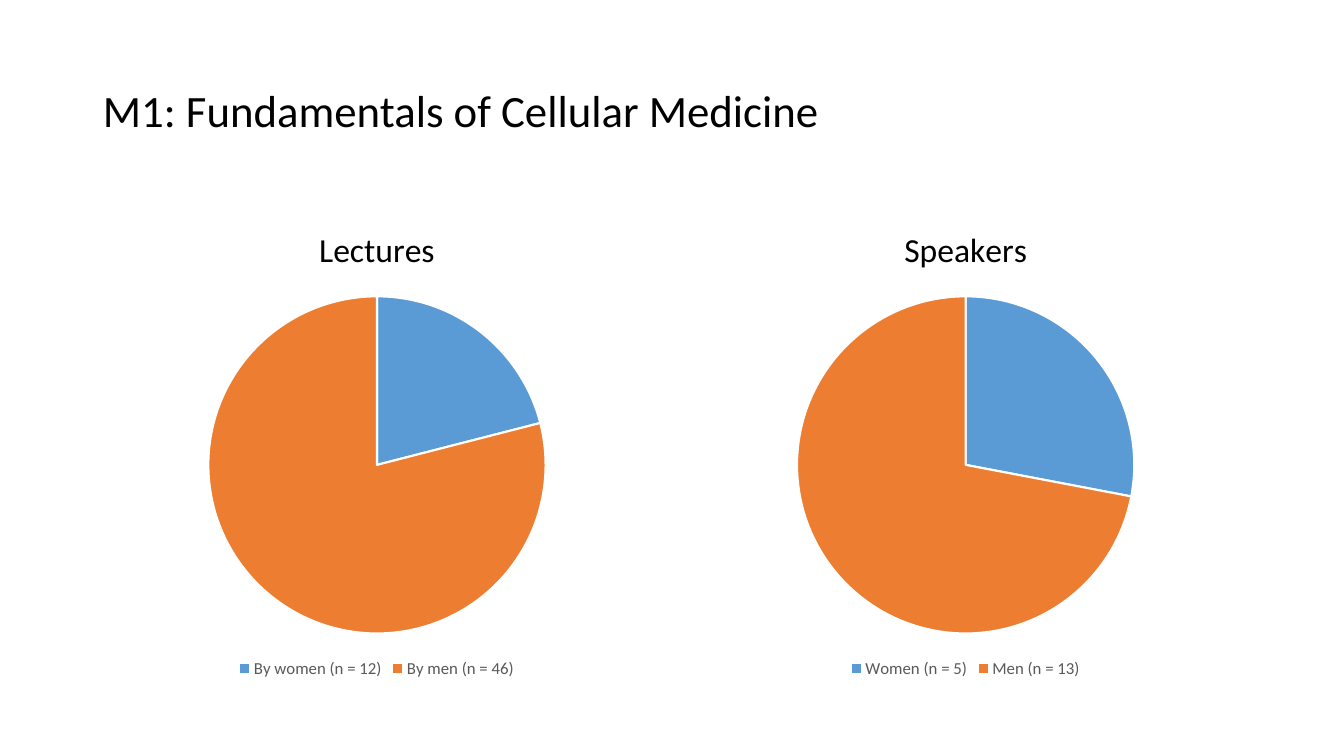
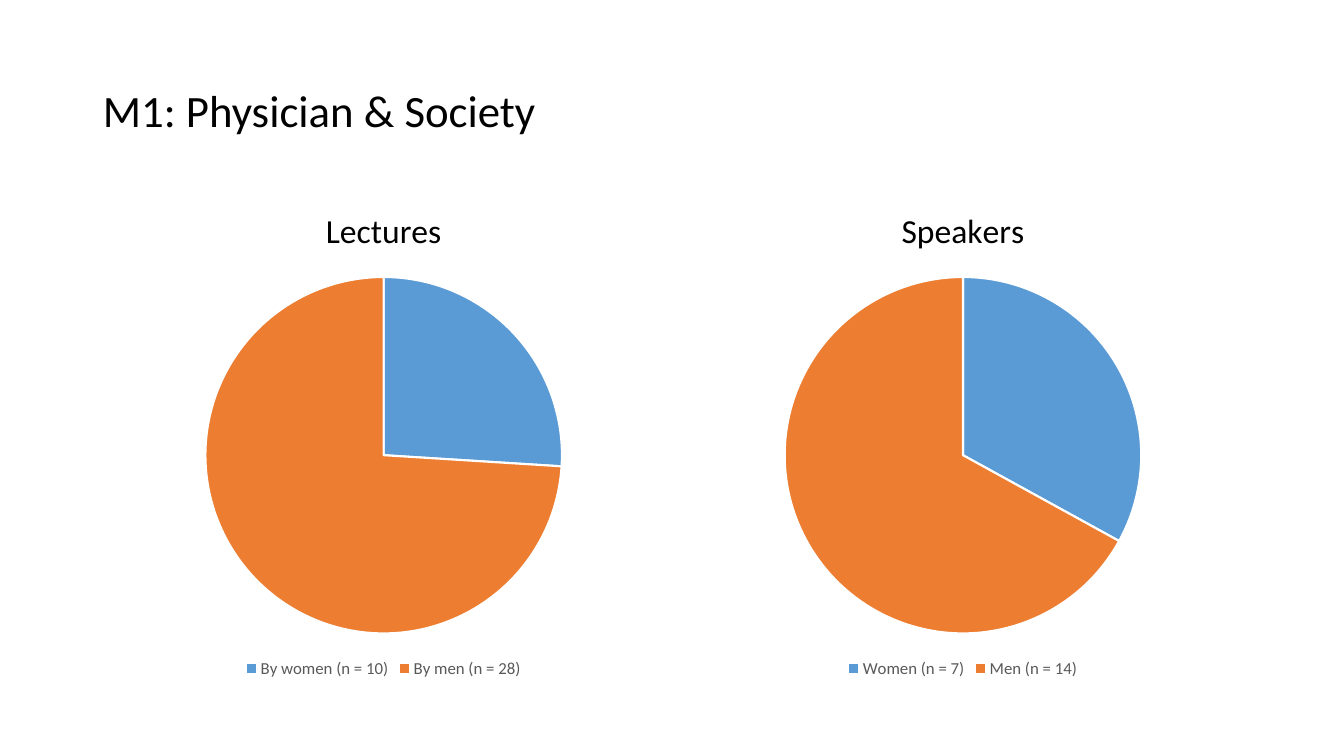
import pptx
import pptx.chart.data
import pptx.dml.color
import pptx.enum.chart
import pptx.enum.text
import pptx.util

BLACK = pptx.dml.color.RGBColor(0x00, 0x00, 0x00)
WHITE = pptx.dml.color.RGBColor(0xFF, 0xFF, 0xFF)
GREY = pptx.dml.color.RGBColor(0x59, 0x59, 0x59)
BLUE = pptx.dml.color.RGBColor(0x5B, 0x9B, 0xD5)
ORANGE = pptx.dml.color.RGBColor(0xED, 0x7D, 0x31)

# Positions are percentages of the slide's width and height.
LEFT_MARGIN, RIGHT_MARGIN = 6.9, 93.1
TITLE_TOP, TITLE_BOTTOM = 5.3, 24.7
LEFT_CHART_END, CHART_BOTTOM = 49.2, 90.3

SLIDES = [
    {
        "title": "M1: Fundamentals of Cellular Medicine",
        "chart_top": 27.3,
        "charts": [
            ("Lectures", LEFT_MARGIN, LEFT_CHART_END,
             {"By women (n = 12)": 21, "By men (n = 46)": 79}),
            ("Speakers", 50.6, RIGHT_MARGIN,
             {"Women (n = 5)": 28, "Men (n = 13)": 72}),
        ],
    },
    {
        "title": "M1: Physician & Society",
        "chart_top": 24.7,
        "charts": [
            ("Lectures", 7.9, LEFT_CHART_END,
             {"By women (n = 10)": 26, "By men (n = 28)": 74}),
            ("Speakers", 50.2, RIGHT_MARGIN,
             {"Women (n = 7)": 33, "Men (n = 14)": 67}),
        ],
    },
]

presentation = pptx.Presentation()
presentation.slide_width = pptx.util.Inches(13.33)
presentation.slide_height = pptx.util.Inches(7.5)
title_only = presentation.slide_layouts.get_by_name("Title Only")


def box(left, top, right, bottom):
    """Turn edges in percent into left, top, width and height."""
    width, height = presentation.slide_width, presentation.slide_height
    return (int(left * width / 100), int(top * height / 100),
            int((right - left) * width / 100), int((bottom - top) * height / 100))


def format_font(font, size, color):
    values = {"name": "Calibri", "size": pptx.util.Pt(size), "bold": False}
    for name, value in values.items():
        setattr(font, name, value)
    font.color.rgb = color


for content in SLIDES:
    slide = presentation.slides.add_slide(title_only)
    title = slide.shapes.title
    title.left, title.top, title.width, title.height = box(
        LEFT_MARGIN, TITLE_TOP, RIGHT_MARGIN, TITLE_BOTTOM)
    title.text_frame.text = content["title"]
    title.text_frame.auto_size = pptx.enum.text.MSO_AUTO_SIZE.NONE
    title.text_frame.vertical_anchor = pptx.enum.text.MSO_ANCHOR.MIDDLE
    paragraph = title.text_frame.paragraphs[0]
    paragraph.alignment = pptx.enum.text.PP_ALIGN.LEFT
    paragraph.line_spacing = 0.9
    format_font(paragraph.runs[0].font, 32, BLACK)

    for name, left, right, shares in content["charts"]:
        data = pptx.chart.data.CategoryChartData()
        data.categories = list(shares)
        data.add_series(name, list(shares.values()))
        chart = slide.shapes.add_chart(
            pptx.enum.chart.XL_CHART_TYPE.PIE,
            *box(left, content["chart_top"], right, CHART_BOTTOM), data).chart
        format_font(chart.font, 10, BLACK)

        chart.has_title = True
        chart.chart_title.include_in_layout = False
        chart.chart_title.text_frame.text = name
        format_font(chart.chart_title.text_frame.paragraphs[0].runs[0].font, 24, BLACK)

        chart.has_legend = True
        chart.legend.position = pptx.enum.chart.XL_LEGEND_POSITION.BOTTOM
        chart.legend.include_in_layout = False
        format_font(chart.legend.font, 12, GREY)

        plot = chart.plots[0]
        plot.vary_by_categories = True
        for index, color in enumerate((BLUE, ORANGE)):
            slice_format = plot.series[0].points[index].format
            slice_format.fill.solid()
            slice_format.fill.fore_color.rgb = color
            slice_format.line.color.rgb = WHITE
            slice_format.line.width = pptx.util.Pt(1.5)

presentation.save("out.pptx")
